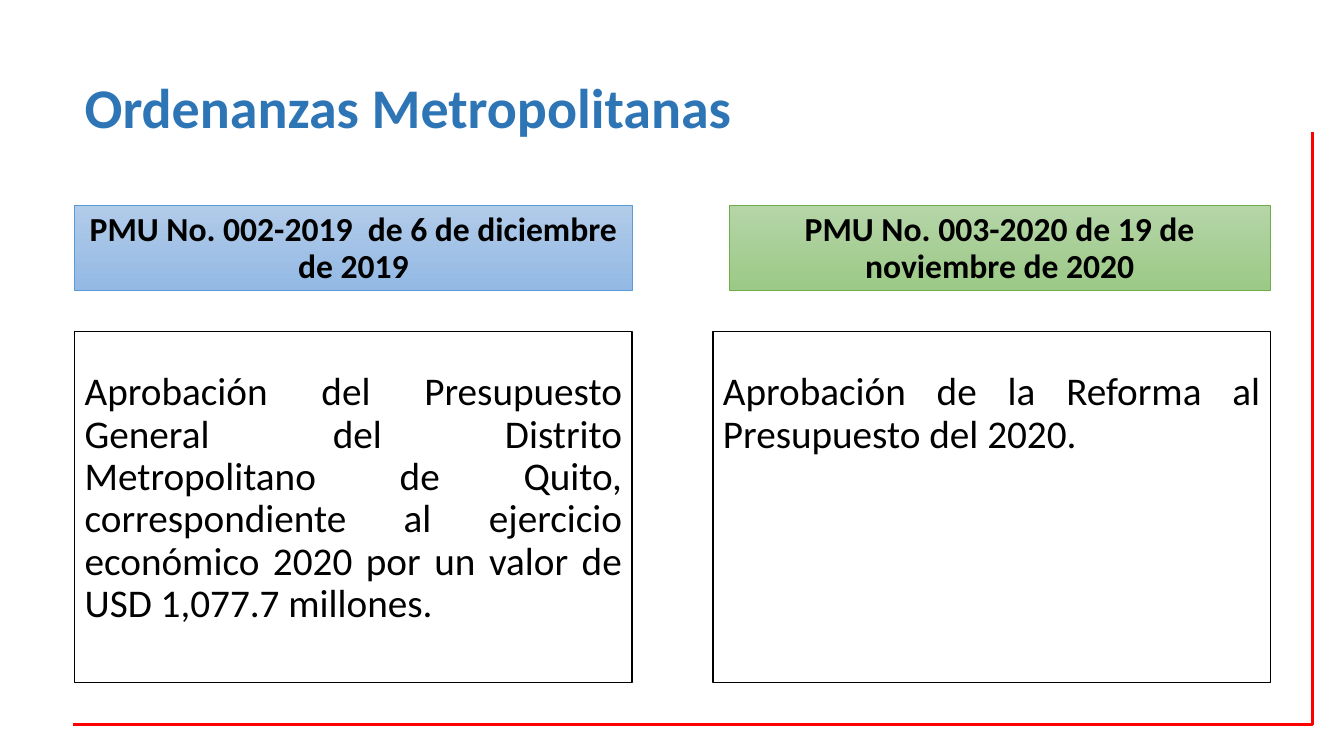
import pptx
import pptx.util
import pptx.dml.color
import pptx.enum.text
from pptx.oxml.ns import qn

Inches = pptx.util.Inches
Pt = pptx.util.Pt
Align = pptx.enum.text.PP_ALIGN
Anchor = pptx.enum.text.MSO_ANCHOR

LEFT, RIGHT = 0.74, 12.6
HEAD_TOP, HEAD_HIGH = 2.04, 0.84
BODY_TOP, BODY_HIGH, BODY_WIDE = 3.29, 3.48, 5.53


def color(code):
    return pptx.dml.color.RGBColor.from_string(code)


def place(shape, box):
    shape.left, shape.top, shape.width, shape.height = map(Inches, box)


def write(shape, text, size, code, bold, align, anchor):
    frame = shape.text_frame
    frame.word_wrap = True
    frame.auto_size = pptx.enum.text.MSO_AUTO_SIZE.NONE
    frame.vertical_anchor = anchor
    para = frame.paragraphs[0]
    props = para._p.get_or_add_pPr()
    props.set("marL", "0")
    props.set("indent", "0")
    props.append(props.makeelement(qn("a:buNone"), {}))
    para.alignment = align
    para.line_spacing = 0.9
    para.space_before = Pt(0)
    run = para.add_run()
    run.text = text
    run.font.name = "Calibri"
    run.font.size = Pt(size)
    run.font.bold = bold
    run.font.color.rgb = color(code)


def outline(shape, code, width):
    shape.line.color.rgb = color(code)
    shape.line.width = Pt(width)


def add_title(shape, box, text):
    place(shape, box)
    write(shape, text, 40, "2E75B6", True, Align.JUSTIFY, Anchor.BOTTOM)


def add_head(shape, box, text, shades, edge):
    place(shape, box)
    shape.fill.gradient()
    shape.fill.gradient_angle = 270
    for stop, shade in zip(shape.fill.gradient_stops, shades):
        stop.color.rgb = color(shade)
    outline(shape, edge, 0.5)
    write(shape, text, 24, "000000", True, Align.CENTER, Anchor.BOTTOM)


def add_body(shape, box, text):
    place(shape, box)
    shape.fill.solid()
    shape.fill.fore_color.rgb = color("FFFFFF")
    outline(shape, "000000", 1)
    shape.text_frame.margin_top = Inches(0.4)
    write(shape, text, 28, "000000", False, Align.JUSTIFY, Anchor.TOP)


def add_border(slide, box):
    left, top, width, height = map(Inches, box)
    path = slide.shapes.build_freeform(left + width, top)
    path.add_line_segments(
        [(left + width, top + height), (left, top + height)], close=False)
    border = path.convert_to_shape()
    border.shadow.inherit = False
    border.fill.background()
    outline(border, "FF0000", 1.75)


def main():
    deck = pptx.Presentation()
    deck.slide_width = Inches(13.33)
    deck.slide_height = Inches(7.5)
    slide = deck.slides.add_slide(deck.slide_layouts[4])
    title, *parts = slide.placeholders
    add_title(title, (LEFT, 0.71, 10.68, 0.74), "Ordenanzas Metropolitanas")
    columns = [
        (LEFT, BODY_WIDE, LEFT,
         "PMU No. 002-2019  de 6 de diciembre de 2019",
         ("B1CBE9", "93B9E4"), "5B9BD5",
         "Aprobación del Presupuesto General del Distrito Metropolitano "
         "de Quito, correspondiente al ejercicio económico 2020 por un "
         "valor de USD 1,077.7 millones."),
        (7.23, RIGHT - 7.23, RIGHT - BODY_WIDE,
         "PMU No. 003-2020 de 19 de noviembre de 2020",
         ("B5D5A7", "9CC987"), "70AD47",
         "Aprobación de la Reforma al Presupuesto del 2020."),
    ]
    pairs = zip(parts[::2], parts[1::2], columns)
    for head, body, (left, width, start, label, shades, edge, text) in pairs:
        add_head(head, (left, HEAD_TOP, width, HEAD_HIGH), label, shades, edge)
        add_body(body, (start, BODY_TOP, BODY_WIDE, BODY_HIGH), text)
    add_border(slide, (0.72, 1.31, 12.3, 5.88))
    deck.save("out.pptx")


if __name__ == "__main__":
    main()
